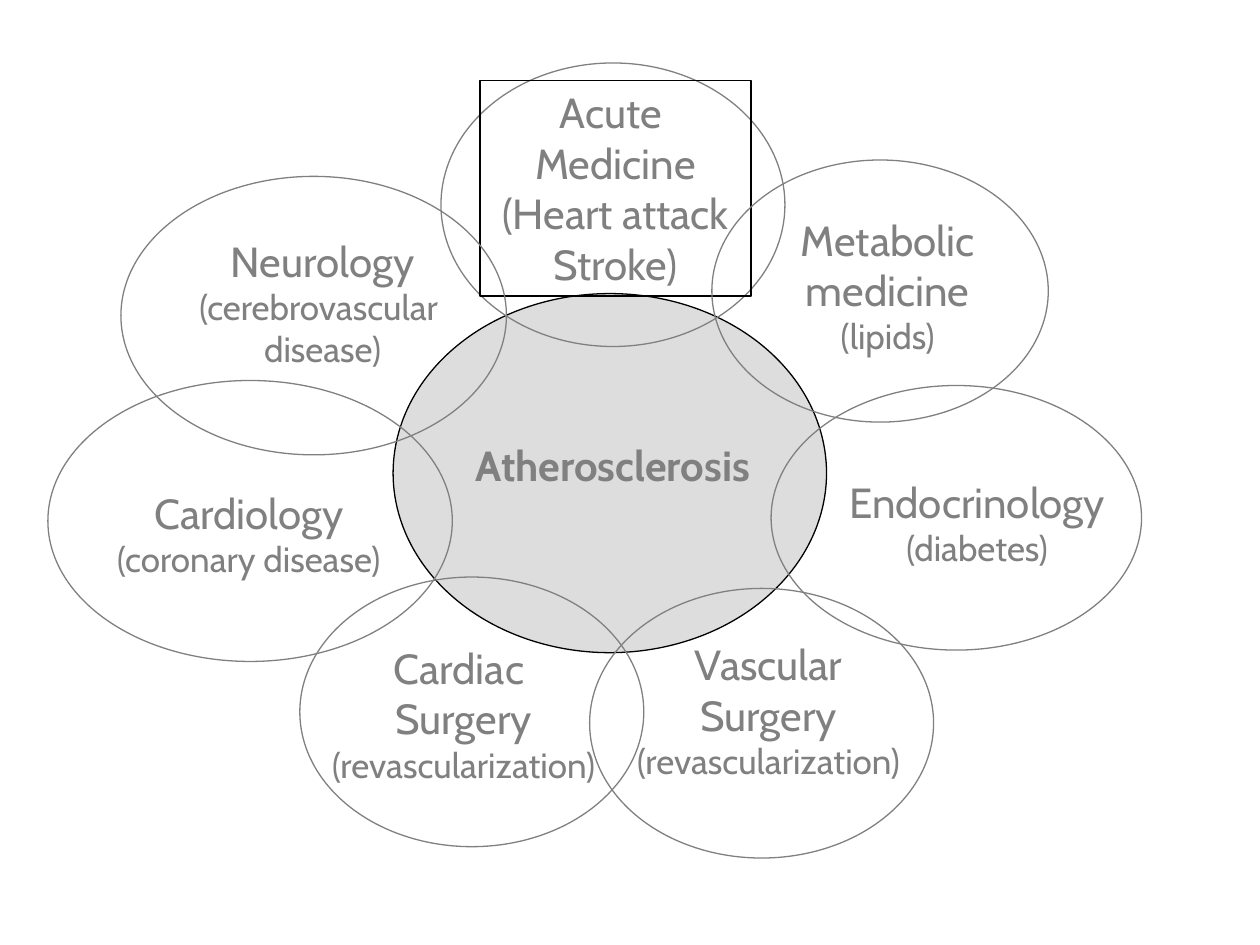
from pptx import Presentation
from pptx.dml.color import RGBColor
from pptx.enum.shapes import MSO_SHAPE
from pptx.enum.text import MSO_ANCHOR, MSO_AUTO_SIZE, PP_ALIGN
from pptx.util import Emu, Pt

SCALE = 9144
GRAY, BLACK, SILVER = "808080", "000000", "DDDDDD"
BIG, SMALL = 24, 20

FIELDS = [
    ((38, 302, 321, 223), (74, 382, 247, 83), False,
     [("Cardiology", BIG), ("(coronary disease)", SMALL)]),
    ((350, 50, 273, 225), (381, 64, 215, 171), True,
     [("Acute ", BIG), ("Medicine", BIG), ("(Heart attack", BIG), ("Stroke)", BIG)]),
    ((238, 458, 273, 214), (245, 505, 246, 123), False,
     [("Cardiac ", BIG), ("Surgery", BIG), ("(revascularization)", SMALL)]),
    ((468, 467, 273, 214), (487, 502, 246, 123), False,
     [("Vascular", BIG), ("Surgery", BIG), ("(revascularization)", SMALL)]),
    ((96, 140, 306, 221), (140, 182, 232, 117), False,
     [("Neurology", BIG), ("(cerebrovascular ", SMALL), ("disease)", SMALL)]),
    ((612, 306, 294, 210), (656, 373, 239, 83), True,
     [("Endocrinology", BIG), ("(diabetes)", SMALL)]),
    ((565, 127, 267, 208), (615, 165, 179, 123), True,
     [("Metabolic medicine", BIG), ("(lipids)", SMALL)]),
]


def px(*sizes):
    """Turn px lengths into EMU."""
    return [Emu(size * SCALE) for size in sizes]


def color(code):
    """Make a colour from a hex string."""
    return RGBColor.from_string(code)


def add_oval(slide, box, line=GRAY, fill=None):
    """Add an outlined ellipse, filled if a colour is given."""
    oval = slide.shapes.add_shape(MSO_SHAPE.OVAL, *px(*box))
    oval.shadow.inherit = False
    oval.line.color.rgb = color(line)
    oval.line.width = Pt(0.75)
    if fill:
        oval.fill.solid()
        oval.fill.fore_color.rgb = color(fill)
    else:
        oval.fill.background()


def add_label(slide, box, lines, wrap=False, bold=False):
    """Add centred lines of text, each with its own size."""
    label = slide.shapes.add_textbox(*px(*box))
    frame = label.text_frame
    frame.word_wrap = wrap
    frame.auto_size = MSO_AUTO_SIZE.SHAPE_TO_FIT_TEXT
    frame.vertical_anchor = MSO_ANCHOR.TOP
    for i, (text, size) in enumerate(lines):
        para = frame.add_paragraph() if i else frame.paragraphs[0]
        para.text = text
        para.alignment = PP_ALIGN.CENTER
        font = para.font
        font.name, font.size, font.bold = "Cabin", Pt(size), bold
        font.color.rgb = color(GRAY)
    return label


def main():
    """Build the slide of fields around atherosclerosis."""
    deck = Presentation()
    deck.slide_width, deck.slide_height = px(1000, 750)
    slide = deck.slides.add_slide(deck.slide_layouts[6])
    add_oval(slide, (312, 233, 344, 285), BLACK, SILVER)
    for oval, box, wrap, lines in FIELDS:
        add_oval(slide, oval)
        label = add_label(slide, box, lines, wrap)
        if lines[0][0].startswith("Acute"):
            label.line.color.rgb = color(BLACK)
            label.line.width = Pt(0.75)
    add_label(slide, (348, 344, 277, 50), [("Atherosclerosis", BIG)], bold=True)
    deck.save("out.pptx")


if __name__ == "__main__":
    main()
